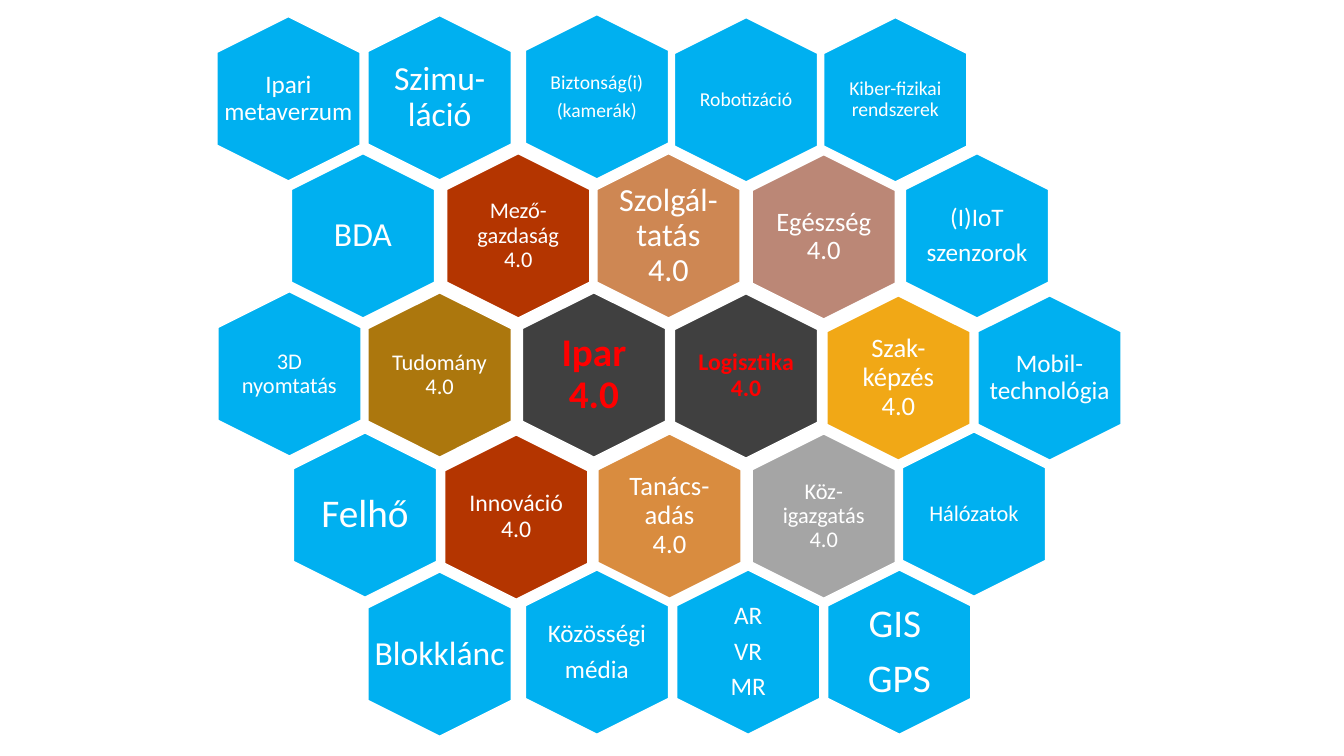
from pptx import Presentation
from pptx.dml.color import RGBColor
from pptx.enum.shapes import MSO_SHAPE as Kind
from pptx.enum.text import MSO_ANCHOR as Anchor, PP_ALIGN as Align
from pptx.util import Inches, Pt

BLUE, WHITE, RED = "00B0F0", "FFFFFF", "FF0000"
DARK, RUST = "404040", "B43500"
SLIM, WIDE = 0.98, 1.42

CELLS = [
    (2.86, 0.98, "Ipari metaverzum", 18, BLUE, {"wide": WIDE}),
    (4.36, 0.97, "Szimu-láció", 24, BLUE, {}),
    (5.92, 0.96, "Biztonság(i)|(kamerák)", 14, BLUE, {}),
    (7.40, 0.99, "Robotizáció", 14, BLUE, {}),
    (8.88, 0.99, "Kiber-fizikai rendszerek", 14, BLUE, {}),
    (3.60, 2.34, "BDA", 24, BLUE, {}),
    (5.14, 2.34, "Mező-gazdaság 4.0", 16, RUST, {"pad": 0.07}),
    (6.63, 2.34, "Szolgál-tatás 4.0", 23, "CE8753", {}),
    (8.17, 2.35, "Egészség 4.0", 19, "BB8776", {}),
    (9.69, 2.34, "(I)IoT|szenzorok", 18, BLUE, {"wide": WIDE}),
    (2.87, 3.71, "3D nyomtatás", 16, BLUE, {}),
    (4.36, 3.72, "Tudomány 4.0", 16, "AC770D", {}),
    (5.89, 3.72, "Ipar 4.0", 28, DARK, {"pad": 0.12, "ink": RED, "bold": True}),
    (7.40, 3.73, "Logisztika 4.0", 17, DARK, {"ink": RED, "bold": True}),
    (8.91, 3.75, "Szak-képzés\n4.0", 19, "F1A816", {"pad": 0.08}),
    (10.41, 3.75, "Mobil-technológia", 18, BLUE, {"wide": WIDE}),
    (3.62, 5.11, "Felhő", 28, BLUE, {}),
    (5.12, 5.13, "Innováció 4.0", 17, RUST, {}),
    (6.64, 5.12, "Tanács-adás 4.0", 19, "D98C3F", {"pad": 0.08}),
    (8.17, 5.12, "Köz-igazgatás\n4.0", 16, "A5A5A5", {"pad": 0.07}),
    (9.66, 5.10, "Hálózatok", 16, BLUE, {}),
    (4.36, 6.49, "Blokklánc", 24, BLUE, {"wide": WIDE}),
    (5.92, 6.47, "Közösségi|média", 18, BLUE, {}),
    (7.42, 6.47, "AR|VR|MR", 18, BLUE, {}),
    (8.92, 6.47, "GIS |GPS", 28, BLUE, {"wide": WIDE}),
]


def tint(code):
    return RGBColor.from_string(code)


class Board:
    font = "Calibri"
    long, short, tall = 1.63, 1.42, 1.12

    def __init__(self, slide):
        self.slide = slide

    def frame(self, x, y, width, height):
        return [Inches(v) for v in (x - width / 2, y - height / 2, width, height)]

    def hexa(self, group, x, y, fill):
        shape = group.shapes.add_shape(
            Kind.HEXAGON, *self.frame(x, y, self.long, self.short))
        shape.rotation = 90
        shape.adjustments[0] = 0.25
        shape.shadow.inherit = False
        shape.fill.solid()
        shape.fill.fore_color.rgb = tint(fill)
        shape.line.color.rgb = tint(WHITE)
        shape.line.width = Pt(1)

    def label(self, group, x, y, text, size, wide=SLIM, pad=0, ink=WHITE, bold=False):
        box = group.shapes.add_textbox(*self.frame(x, y, wide, self.tall))
        body = box.text_frame
        body.word_wrap = True
        body.vertical_anchor = Anchor.MIDDLE
        body.margin_left = body.margin_right = Inches(pad)
        body.margin_top = body.margin_bottom = Inches(pad)
        for i, part in enumerate(text.split("|")):
            para = body.add_paragraph() if i else body.paragraphs[0]
            para.alignment = Align.CENTER
            para.line_spacing = 0.9
            para.space_after = Pt(round(size * 0.33))
            for j, line in enumerate(part.split("\n")):
                if j:
                    para.add_line_break()
                run = para.add_run()
                run.text = line
                run.font.name = self.font
                run.font.size = Pt(size)
                run.font.bold = bold
                run.font.color.rgb = tint(ink)

    def cell(self, x, y, text, size, fill, style):
        group = self.slide.shapes.add_group_shape()
        self.hexa(group, x, y, fill)
        self.label(group, x, y, text, size, **style)


def main():
    deck = Presentation()
    deck.slide_width, deck.slide_height = Inches(13.33), Inches(7.5)
    board = Board(deck.slides.add_slide(deck.slide_layouts[6]))
    for cell in CELLS:
        board.cell(*cell)
    deck.save("out.pptx")


if __name__ == "__main__":
    main()
